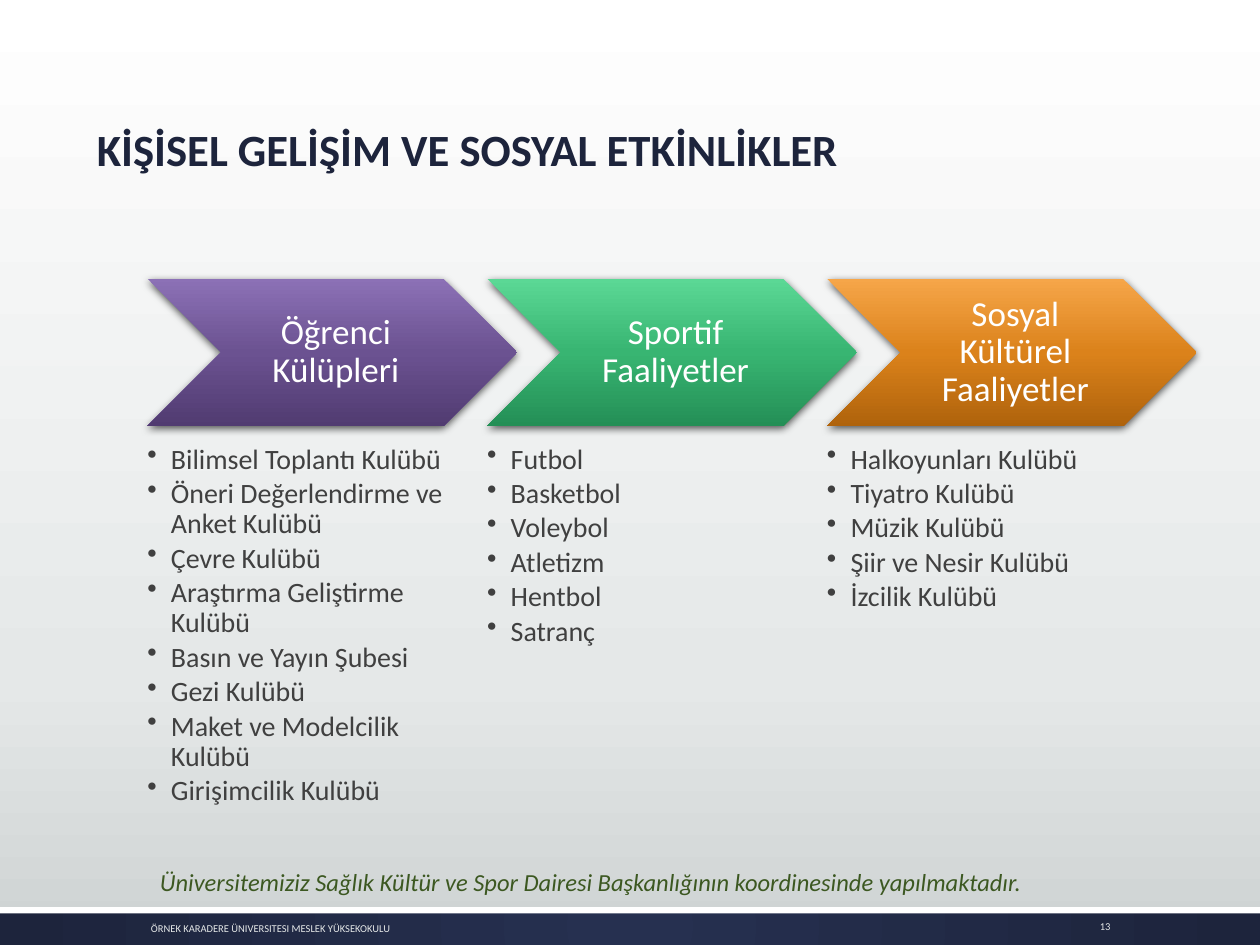
from copy import deepcopy

from lxml import etree
from pptx import Presentation
from pptx.dml.color import RGBColor
from pptx.enum.shapes import MSO_SHAPE
from pptx.enum.text import MSO_ANCHOR, PP_ALIGN
from pptx.oxml import parse_xml
from pptx.util import Pt

RECT, CHEVRON = MSO_SHAPE.RECTANGLE, MSO_SHAPE.CHEVRON
TOP, MIDDLE, BOTTOM = MSO_ANCHOR.TOP, MSO_ANCHOR.MIDDLE, MSO_ANCHOR.BOTTOM
LEFT, CENTER, RIGHT = PP_ALIGN.LEFT, PP_ALIGN.CENTER, PP_ALIGN.RIGHT
NS = "http://schemas.openxmlformats.org/drawingml/2006/main"

RADIAL = f"""<a:path xmlns:a="{NS}" path="circle">
  <a:fillToRect l="50000" t="50000" r="50000" b="50000"/></a:path>"""
SHADOW = f"""<a:effectLst xmlns:a="{NS}">
  <a:outerShdw blurRad="57150" dist="19050" dir="5400000" algn="ctr" rotWithShape="0">
    <a:srgbClr val="000000"><a:alpha val="63000"/></a:srgbClr>
  </a:outerShdw></a:effectLst>"""

NAVY, PALE, WHITE, GRAY, GREEN = "1D243C", "E5E8E8", "FFFFFF", "404040", "3C5821"
PAD = (7.2, 3.6, 7.2, 3.6)
START, PITCH = 84.25, 194.15
GROUPS = [
    ("Öğrenci Külüpleri", ("8C71B6", "6B5291", "513B71"),
     ["Bilimsel Toplantı Kulübü", "Öneri Değerlendirme ve Anket Kulübü",
      "Çevre Kulübü", "Araştırma Geliştirme Kulübü", "Basın ve Yayın Şubesi",
      "Gezi Kulübü", "Maket ve Modelcilik Kulübü", "Girişimcilik Kulübü"]),
    ("Sportif Faaliyetler", ("5BD895", "38B572", "248F56"),
     ["Futbol", "Basketbol", "Voleybol", "Atletizm", "Hentbol", "Satranç"]),
    ("Sosyal Kültürel Faaliyetler", ("F6A649", "DB821B", "AF630C"),
     ["Halkoyunları Kulübü", "Tiyatro Kulübü", "Müzik Kulübü",
      "Şiir ve Nesir Kulübü", "İzcilik Kulübü"]),
]


def color(code):
    return RGBColor.from_string(code)


def blend(fill, root, stops, radial=False):
    """Give fill, which lies within root, a gradient of (position, colour) stops."""
    fill.gradient()
    fill.gradient_angle = 270
    marks = root.xpath(".//a:gsLst")[0]
    while len(marks) < len(stops):
        marks.append(deepcopy(marks[0]))
    for mark, (pos, code) in zip(fill.gradient_stops, stops):
        mark.position = pos
        mark.color.rgb = color(code)
    if radial:
        line = root.xpath(".//a:lin")[0]
        line.getparent().replace(line, parse_xml(RADIAL))


class Deck:
    """Holds the font and the current slide."""

    def __init__(self, font):
        self.font = font
        self.show = Presentation()
        self.show.slide_width, self.show.slide_height = Pt(720), Pt(540)
        self.slide = self.show.slides.add_slide(self.show.slide_layouts[6])

    def ground(self, stops):
        blend(self.slide.background.fill, self.slide.element, stops)

    def shape(self, kind, box, stops, radial=False):
        item = self.slide.shapes.add_shape(kind, *map(Pt, box))
        item.shadow.inherit = False
        item.line.fill.background()
        if len(stops) == 1:
            item.fill.solid()
            item.fill.fore_color.rgb = color(stops[0][1])
        else:
            blend(item.fill, item.element, stops, radial)
        return item

    def arrow(self, box, tones):
        item = self.shape(CHEVRON, box, list(zip((0, 0.5, 1), tones)))
        old = item.element.spPr.xpath("a:effectLst")[0]
        old.getparent().replace(old, parse_xml(SHADOW))

    def text(self, box, words, size, tone, pad=PAD, anchor=TOP, align=LEFT,
             lead=1, bold=False, italic=False):
        frame = self.slide.shapes.add_textbox(*map(Pt, box)).text_frame
        frame.word_wrap = True
        frame.vertical_anchor = anchor
        (frame.margin_left, frame.margin_top,
         frame.margin_right, frame.margin_bottom) = map(Pt, pad)
        frame.text = words
        for para in frame.paragraphs:
            para.alignment, para.line_spacing = align, lead
            for run in para.runs:
                font = run.font
                font.name, font.size = self.font, Pt(size)
                font.bold, font.italic = bold, italic
                font.color.rgb = color(tone)
        return frame

    def bullets(self, box, items):
        frame = self.text(box, "\n".join(items), 16, GRAY, pad=(0, 0, 0, 0), lead=0.9)
        for para in frame.paragraphs:
            para.space_after = Pt(2.4)
            props = para._p.get_or_add_pPr()
            props.set("marL", str(Pt(13.5)))
            props.set("indent", str(Pt(-13.5)))
            etree.SubElement(props, f"{{{NS}}}buChar", char="•")


def main():
    deck = Deck("Calibri")
    deck.ground([(0, WHITE), (0.72, PALE), (1, "CDD2D2")])
    deck.shape(RECT, (0, 518.4, 720, 21.6), [(0, "263050"), (1, NAVY)], radial=True)
    deck.shape(RECT, (0, 518.4, 720, 3.6), [(0, WHITE)])
    deck.text((48.25, 36.7, 618, 67.7), "KİŞİSEL GELİŞİM VE SOSYAL ETKİNLİKLER",
              25.5, NAVY, anchor=BOTTOM, lead=0.9, bold=True)
    for col, (head, tones, items) in enumerate(GROUPS):
        left = START + col * PITCH
        deck.arrow((left, 159.2, 211.2, 84.4), tones)
        deck.text((left + 42.2, 159.2, 126.7, 84.4), head, 20, WHITE,
                  pad=(6.5, 2.2, 2.2, 2.2), anchor=MIDDLE, align=CENTER, lead=0.9)
        deck.bullets((left, 254.2, 169, 216.7), items)
    deck.text((84.25, 491.8, 630, 24.5),
              "Üniversitemiziz Sağlık Kültür ve Spor Dairesi Başkanlığının "
              "koordinesinde yapılmaktadır.", 14, GREEN, italic=True)
    deck.text((79.2, 521.3, 422.6, 18.7), "ÖRNEK KARADERE ÜNIVERSITESI MESLEK YÜKSEKOKULU",
              6, PALE, anchor=MIDDLE)
    deck.text((603.4, 519.9, 38.2, 18.7), "13", 6, PALE, anchor=MIDDLE, align=RIGHT)
    deck.show.save("out.pptx")


if __name__ == "__main__":
    main()
